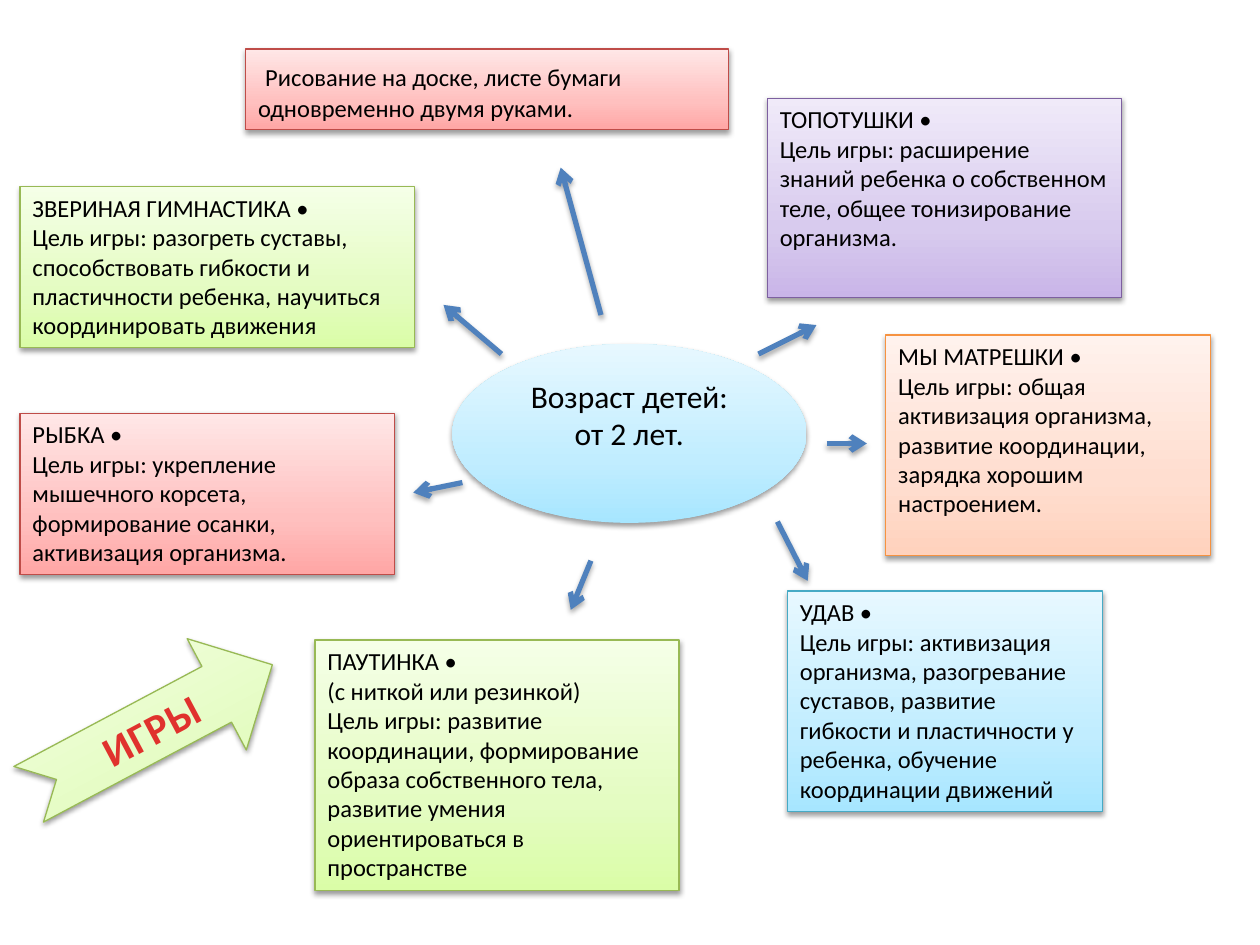
import copy
from dataclasses import dataclass

import lxml.etree
import pptx
import pptx.dml.color
import pptx.enum.shapes
import pptx.enum.text
import pptx.oxml.ns
import pptx.util

Inches = pptx.util.Inches
Pt = pptx.util.Pt
Kind = pptx.enum.shapes.MSO_SHAPE
Align = pptx.enum.text.PP_ALIGN
Anchor = pptx.enum.text.MSO_ANCHOR
qn = pptx.oxml.ns.qn

THEMES = {
    "green": ("98B955", "DAFDA7", "E4FCC2", "F5FFE7"),
    "violet": ("7D60A0", "C9B5E8", "D8CBEE", "F0EAF9"),
    "red": ("BF4C48", "FFA6A5", "FFC0BF", "FFE7E7"),
    "orange": ("F69240", "FFD2BD", "FFDED0", "FFF2ED"),
    "blue": ("46AAC5", "A7E6FF", "C1EDFF", "E7F8FF"),
}
FONT = {"name": "Calibri", "size": Pt(14)}
FRAME = {"word_wrap": True, "vertical_anchor": Anchor.TOP}
CENTER = {"word_wrap": True, "vertical_anchor": Anchor.MIDDLE}


@dataclass
class Box:
    at: tuple
    theme: str
    text: str
    lead: str = ""


@dataclass
class Arrow:
    start: tuple
    end: tuple


BOXES = [
    Box((0.16, 1.48, 3.13, 1.28), "green",
        "ЗВЕРИНАЯ ГИМНАСТИКА •\nЦель игры: разогреть суставы, способствовать "
        "гибкости и пластичности ребенка, научиться координировать движения"),
    Box((6.09, 0.78, 2.81, 1.58), "violet",
        "ТОПОТУШКИ •\nЦель игры: расширение знаний ребенка о собственном теле, "
        "общее тонизирование организма."),
    Box((1.95, 0.39, 3.83, 0.64), "red",
        "Рисование на доске, листе бумаги одновременно двумя руками.", " "),
    Box((2.5, 5.08, 2.89, 1.99), "green",
        "ПАУТИНКА •\n(с ниткой или резинкой)\nЦель игры: развитие координации, "
        "формирование образа собственного тела, развитие умения "
        "ориентироваться в пространстве"),
    Box((7.03, 2.66, 2.58, 1.75), "orange",
        "МЫ МАТРЕШКИ •\nЦель игры: общая активизация организма, развитие "
        "координации, зарядка хорошим настроением."),
    Box((0.16, 3.28, 2.97, 1.28), "red",
        "РЫБКА •\nЦель игры: укрепление мышечного корсета, формирование осанки, "
        "активизация организма."),
    Box((6.25, 4.69, 2.5, 1.75), "blue",
        "УДАВ •\nЦель игры: активизация организма, разогревание суставов, "
        "развитие гибкости и пластичности у ребенка, обучение координации "
        "движений"),
]
ARROWS = [
    Arrow((4.77, 2.5), (4.45, 1.33)),
    Arrow((6.02, 2.81), (6.48, 2.58)),
    Arrow((6.56, 3.52), (6.88, 3.52)),
    Arrow((6.17, 4.14), (6.41, 4.61)),
    Arrow((4.69, 4.45), (4.53, 4.84)),
    Arrow((3.67, 3.83), (3.28, 3.91)),
    Arrow((3.98, 2.81), (3.52, 2.42)),
]


def color(code: str):
    return pptx.dml.color.RGBColor.from_string(code)


def style(item, values: dict) -> None:
    for key, value in values.items():
        setattr(item, key, value)


def shade(fill, stops: list, angle: int) -> None:
    fill.gradient()
    fill.gradient_angle = angle
    nodes = fill.gradient_stops
    first = nodes[0]
    style(first, {"position": 0})
    root = fill._fill._gradFill.find(qn("a:gsLst"))
    while len(root) < len(stops):
        root.append(copy.deepcopy(root[0]))
    for node, (place, code) in zip(fill.gradient_stops, stops):
        node.position = place
        node.color.rgb = color(code)


def shadow(props, alpha: int, dist: float) -> None:
    root = props.find(qn("a:effectLst"))
    if root is None:
        root = lxml.etree.SubElement(props, qn("a:effectLst"))
    outer = lxml.etree.SubElement(
        root, qn("a:outerShdw"), blurRad=str(Pt(3.1)), dist=str(Pt(dist)),
        dir="5400000", rotWithShape="0")
    tone = lxml.etree.SubElement(outer, qn("a:srgbClr"), val="000000")
    lxml.etree.SubElement(tone, qn("a:alpha"), val=str(alpha * 1000))


def panel(slide, kind, at: tuple, theme: str, edge: bool = True):
    shape = slide.shapes.add_shape(kind, *map(Inches, at))
    line, *tones = THEMES[theme]
    shade(shape.fill, list(zip((0, 0.35, 1), tones)), 90)
    if edge:
        shape.line.color.rgb = color(line)
        shape.line.width = Pt(0.75)
    else:
        shape.line.fill.background()
    shape.shadow.inherit = False
    shadow(shape._element.spPr, 38, 1.6)
    return shape


def write(para, text: str, values: dict):
    run = para.add_run()
    run.text = text
    style(run.font, FONT | values)
    run.font.color.rgb = color("000000")
    return run


def card(slide, box: Box) -> None:
    frame = panel(slide, Kind.RECTANGLE, box.at, box.theme).text_frame
    style(frame, FRAME)
    para = frame.paragraphs[0]
    para.alignment = Align.LEFT
    if box.lead:
        write(para, box.lead, {"size": Pt(18)})
    for index, line in enumerate(box.text.split("\n")):
        if index:
            para.add_line_break()
        write(para, line, {})


def label(shape, text: str, values: dict):
    style(shape.text_frame, CENTER)
    para = shape.text_frame.paragraphs[0]
    para.alignment = Align.CENTER
    return write(para, text, values)


def link(slide, arrow: Arrow) -> None:
    line = slide.shapes.add_connector(
        pptx.enum.shapes.MSO_CONNECTOR.STRAIGHT,
        *map(Inches, arrow.start + arrow.end))
    line.line.color.rgb = color("4F81BD")
    line.line.width = Pt(3)
    props = line._element.spPr
    lxml.etree.SubElement(props.find(qn("a:ln")), qn("a:tailEnd"), type="arrow")
    shadow(props, 35, 1.8)


def main() -> None:
    deck = pptx.Presentation()
    style(deck, {"slide_width": Inches(10), "slide_height": Inches(7.5)})
    slide = deck.slides.add_slide(deck.slide_layouts[6])

    hub = panel(slide, Kind.OVAL, (3.59, 2.73, 2.81, 1.42), "blue", False)
    label(hub, "Возраст детей: от 2 лет.", {"size": Pt(18)})
    hub.text_frame.margin_bottom = Inches(0.35)

    for box in BOXES:
        card(slide, box)
    for arrow in ARROWS:
        link(slide, arrow)

    sign = panel(slide, Kind.NOTCHED_RIGHT_ARROW, (0.1, 5.29, 2.19, 1), "green")
    sign.rotation = 332
    run = label(sign, "ИГРЫ", {"size": Pt(24), "bold": True})
    shade(run.font.fill, [(0.25, "E0322D"), (1, "A2201C")], 270)
    run.font._element.set("spc", "50")

    deck.save("out.pptx")


if __name__ == "__main__":
    main()
